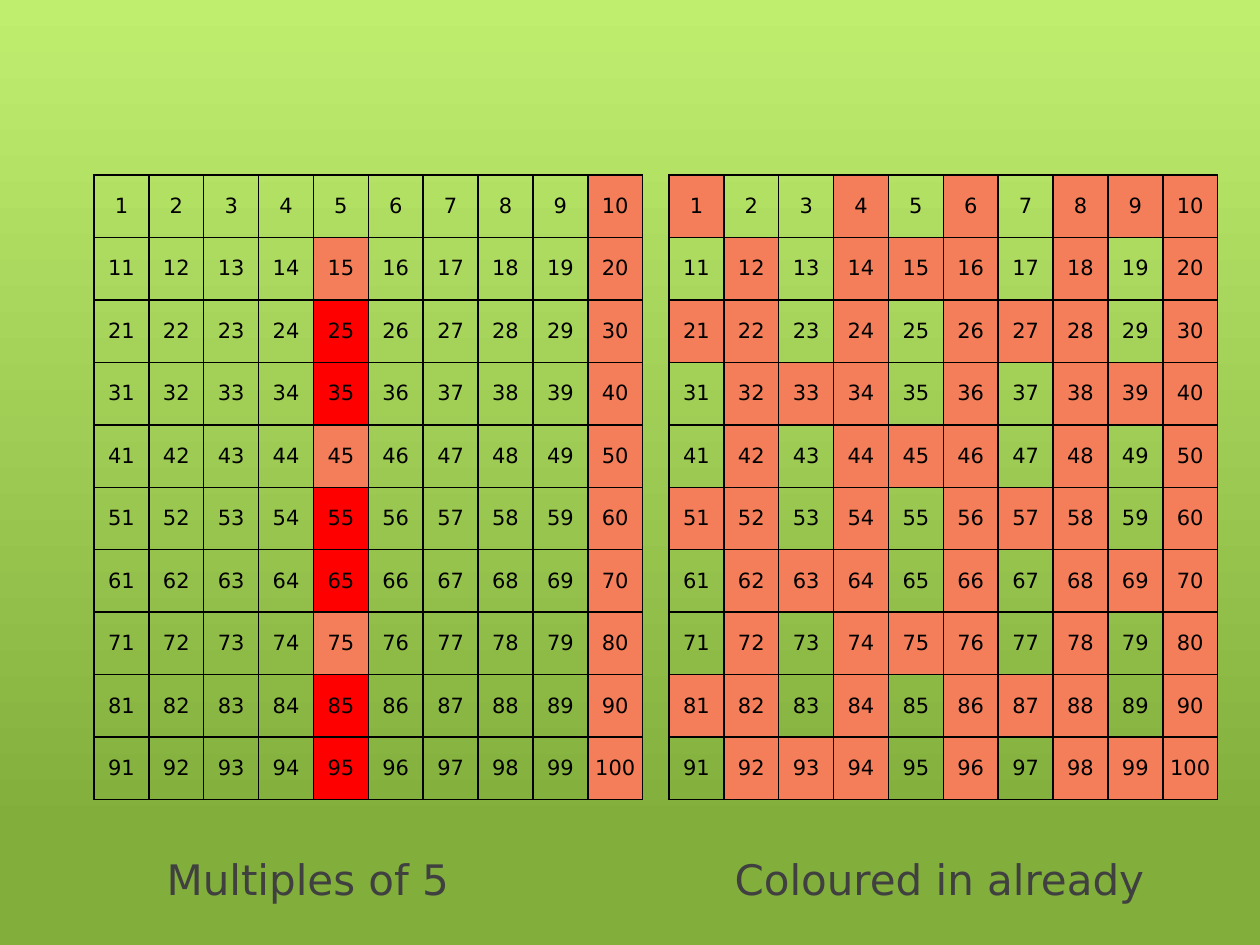
"""Build a slide with two hundred-squares, for multiples of 5 and numbers already coloured."""
from lxml import etree
from pptx import Presentation
from pptx.dml.color import RGBColor
from pptx.enum.text import MSO_ANCHOR, MSO_AUTO_SIZE, PP_ALIGN
from pptx.oxml.ns import qn
from pptx.util import Emu, Pt

MIDDLE, LEFT, CENTER = MSO_ANCHOR.MIDDLE, PP_ALIGN.LEFT, PP_ALIGN.CENTER
FIXED = MSO_AUTO_SIZE.NONE
SCALE = 914400 / 126
FONT = "DejaVu Sans"
SALMON, RED, BLACK, GREY = "F47E5A", "FF0000", "000000", "404040"
SKY = [(0, "BFEE6F"), (0.88, "82AE3C")]
LABELS = ["Multiples of 5", "Coloured in already"]
TITLE = (154, 810, 1081, 138)
TAB = 568
TOP, WIDE, HIGH, SIDE = 175, 549, 625, 10


def px(num):
    return Emu(round(num * SCALE))


def rgb(code):
    return RGBColor.from_string(code)


def done(num):
    """Tell whether a number was coloured before the multiples of 5."""
    return num == 1 or num > 3 and (num % 2 == 0 or num % 3 == 0)


def fives(num):
    if num > 5 and num % 5 == 0:
        return SALMON if done(num) else RED
    return None


def past(num):
    return SALMON if done(num) else None


GRIDS = [(94, fives), (669, past)]


def write(frame, text, size=12, color=BLACK, align=CENTER):
    para = frame.paragraphs[0]
    para.alignment = align
    run = para.add_run()
    run.text = text
    run.font.name, run.font.size = FONT, Pt(size)
    run.font.color.rgb = rgb(color)
    return para


def border(cell):
    props = cell._tc.get_or_add_tcPr()
    for spot, tag in enumerate(("a:lnL", "a:lnR", "a:lnT", "a:lnB")):
        line = etree.Element(qn(tag), w=str(Pt(1)))
        fill = etree.SubElement(line, qn("a:solidFill"))
        etree.SubElement(fill, qn("a:srgbClr"), val=BLACK)
        props.insert(spot, line)


def grid(slide, left, shade):
    frame = slide.shapes.add_table(SIDE, SIDE, px(left), px(TOP), px(WIDE), px(HIGH))
    table = frame.table
    table.first_row = table.horz_banding = False
    for num, cell in enumerate(table.iter_cells(), 1):
        write(cell.text_frame, str(num))
        cell.vertical_anchor = MIDDLE
        if num == SIDE * SIDE:
            cell.margin_left = cell.margin_right = px(5)
        color = shade(num)
        if color:
            cell.fill.solid()
            cell.fill.fore_color.rgb = rgb(color)
        else:
            cell.fill.background()
        border(cell)


def heading(slide):
    title = slide.shapes.title
    title.left, title.top, title.width, title.height = map(px, TITLE)
    frame = title.text_frame
    frame.word_wrap, frame.auto_size = True, FIXED
    frame.vertical_anchor = MIDDLE
    para = write(frame, "\t".join(LABELS), size=24, color=GREY, align=LEFT)
    tabs = etree.SubElement(para._p.get_or_add_pPr(), qn("a:tabLst"))
    etree.SubElement(tabs, qn("a:tab"), pos=str(px(TAB)), algn="l")


def main():
    deck = Presentation()
    deck.slide_width, deck.slide_height = px(1260), px(945)
    slide = deck.slides.add_slide(deck.slide_layouts[5])
    fill = slide.background.fill
    fill.gradient()
    fill.gradient_angle = 270
    for stop, (place, color) in zip(fill.gradient_stops, SKY):
        stop.position, stop.color.rgb = place, rgb(color)
    heading(slide)
    for left, shade in GRIDS:
        grid(slide, left, shade)
    deck.save("out.pptx")


if __name__ == "__main__":
    main()
